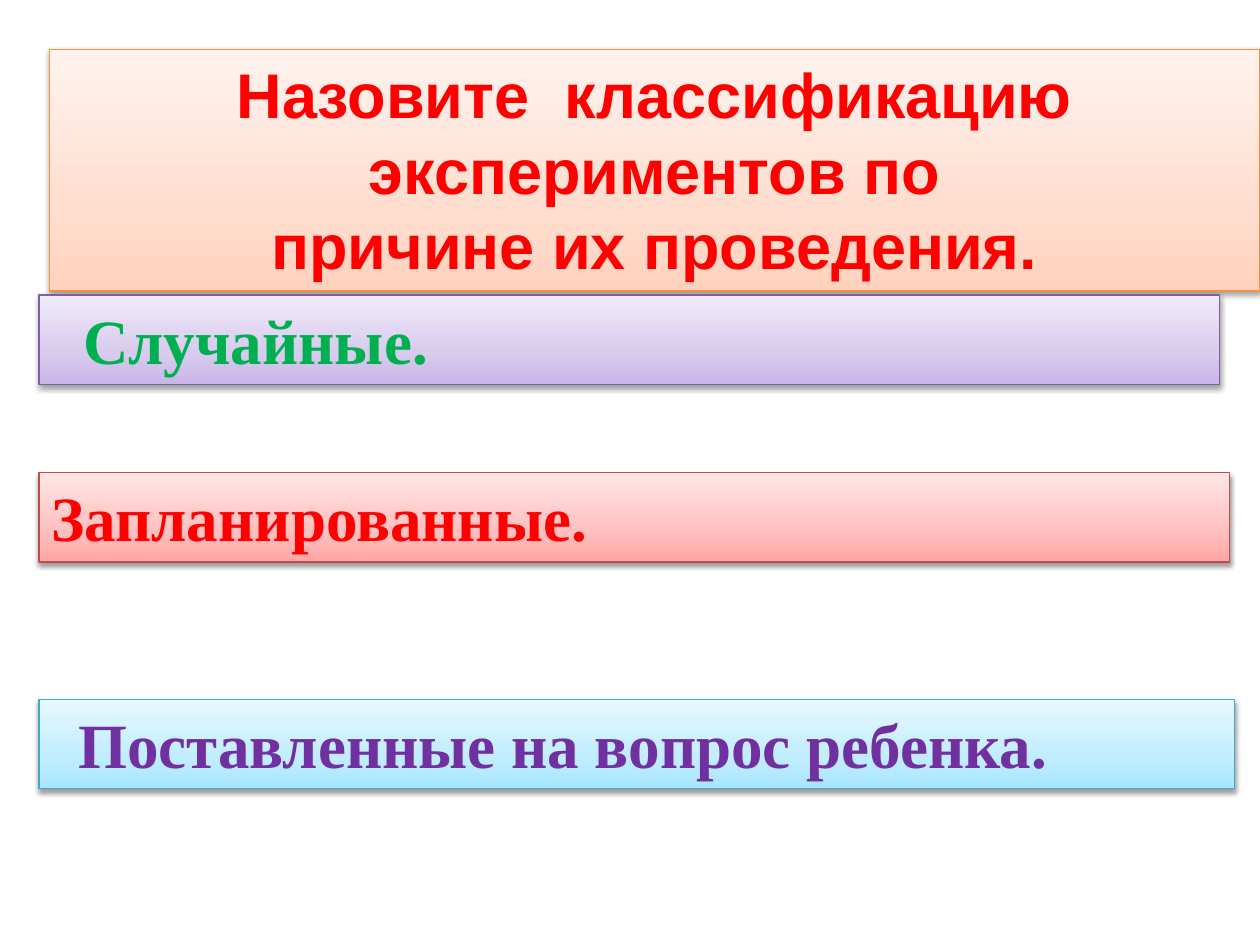
from lxml.etree import SubElement
from pptx import Presentation
from pptx.dml.color import RGBColor
from pptx.enum.text import MSO_ANCHOR, MSO_AUTO_SIZE, PP_ALIGN
from pptx.oxml import parse_xml
from pptx.oxml.ns import nsdecls, qn
from pptx.util import Inches, Pt

COLORS = {
    "red": "FF0000", "green": "00B050", "purple": "7030A0",
    "orange_line": "F69240", "violet_line": "7D60A0",
    "rose_line": "BF4C48", "sky_line": "46AAC5",
}
GRADIENTS = {
    "orange": ("FFD2BD", "FFDED0", "FFF2ED"),
    "violet": ("C9B5E8", "D8CBEE", "F0EAF9"),
    "rose": ("FFA6A5", "FFC0BF", "FFE7E7"),
    "sky": ("A7E6FF", "C1EDFF", "E7F8FF"),
}
STOPS = (0, 35, 100)
SHADOW = (
    f'<a:effectLst {nsdecls("a")}>'
    '<a:outerShdw blurRad="40000" dist="20000" dir="5400000" rotWithShape="0">'
    '<a:srgbClr val="000000"><a:alpha val="38000"/></a:srgbClr>'
    '</a:outerShdw></a:effectLst>'
)
ANSWERS = (
    ("Случайные.", "violet", "green", 2.34, 9.37, 0.25),
    ("Запланированные.", "rose", "red", 3.75, 9.45, 0),
    ("Поставленные на вопрос ребенка.", "sky", "purple", 5.55, 9.49, 0.21),
)


def style_panel(box, theme):
    """Give a box its upward gradient, thin outline and soft shadow."""
    box.fill.gradient()
    box.fill.gradient_angle = 90
    props = box.element.spPr
    stops = props.find(qn("a:gradFill")).find(qn("a:gsLst"))
    for stop in list(stops):
        stops.remove(stop)
    for position, color in zip(STOPS, GRADIENTS[theme]):
        stop = SubElement(stops, qn("a:gs"), pos=str(position * 1000))
        SubElement(stop, qn("a:srgbClr"), val=color)
    box.line.color.rgb = RGBColor.from_string(COLORS[f"{theme}_line"])
    box.line.width = Pt(0.75)
    props.append(parse_xml(SHADOW))


def write_text(box, text, font_name, color, align):
    """Write one bold paragraph into a box that grows with its text."""
    frame = box.text_frame
    frame.text = text
    frame.word_wrap = True
    frame.auto_size = MSO_AUTO_SIZE.SHAPE_TO_FIT_TEXT
    frame.vertical_anchor = MSO_ANCHOR.TOP
    para = frame.paragraphs[0]
    para.alignment = align
    para.font.name = font_name
    para.font.size = Pt(36)
    para.font.bold = True
    para.font.color.rgb = RGBColor.from_string(COLORS[color])


def place_question(page, left, top, width, height):
    """Move and format the title placeholder as the question panel."""
    title = page.shapes.title
    title.left, title.top, title.width, title.height = left, top, width, height
    style_panel(title, "orange")
    question = "Назовите  классификацию экспериментов по\vпричине их проведения."
    write_text(title, question, "Arial", "red", PP_ALIGN.CENTER)


def place_answer(page, left, top, width, height, text, theme, color, indent):
    """Add one answer panel with its text indented from the left edge."""
    box = page.shapes.add_textbox(left, top, width, height)
    style_panel(box, theme)
    write_text(box, text, "Times New Roman", color, PP_ALIGN.LEFT)
    box.text_frame.margin_left = Inches(0.1) + indent


def main():
    """Build the slide and save the deck."""
    deck = Presentation()
    deck.slide_width, deck.slide_height = Inches(10), Inches(7.5)
    page = deck.slides.add_slide(deck.slide_layouts[5])
    place_question(page, Inches(0.39), Inches(0.39), Inches(9.61), Inches(1.92))
    for text, theme, color, top, width, indent in ANSWERS:
        place_answer(page, Inches(0.31), Inches(top), Inches(width), Inches(0.71),
                     text, theme, color, Inches(indent))
    deck.save("out.pptx")


if __name__ == "__main__":
    main()
